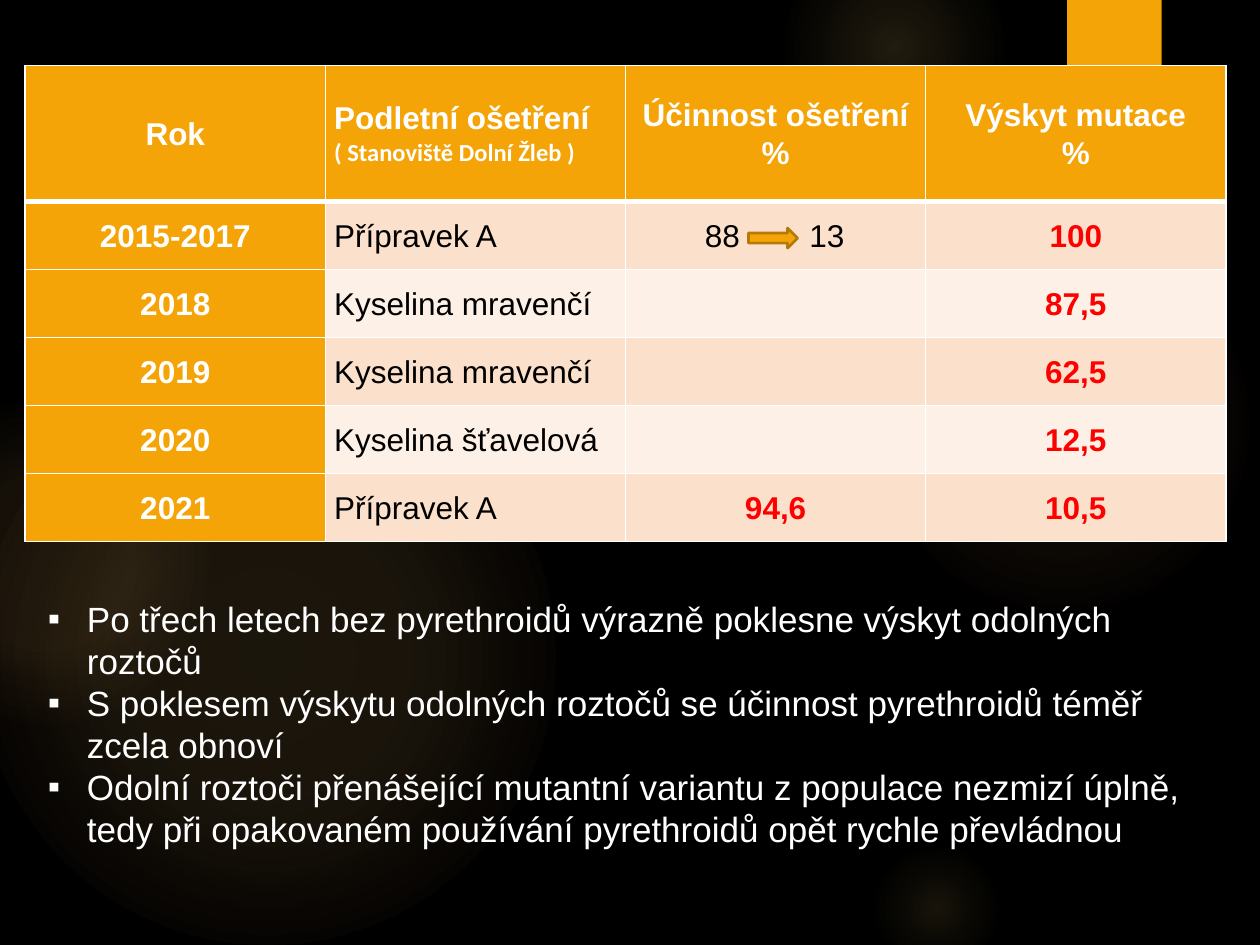
import pptx
import pptx.util
import pptx.dml.color
import pptx.enum.shapes
import pptx.enum.text
import pptx.oxml
import pptx.oxml.ns

Inches = pptx.util.Inches
Pt = pptx.util.Pt
RGBColor = pptx.dml.color.RGBColor
SHAPE = pptx.enum.shapes.MSO_SHAPE
ALIGN = pptx.enum.text.PP_ALIGN
ANCHOR = pptx.enum.text.MSO_ANCHOR
NS = pptx.oxml.ns.nsdecls("a")

BLACK = RGBColor(0x00, 0x00, 0x00)
WHITE = RGBColor(0xFF, 0xFF, 0xFF)
RED = RGBColor(0xFF, 0x00, 0x00)
ORANGE = RGBColor(0xF5, 0xA4, 0x08)
BROWN = RGBColor(0xB5, 0x79, 0x06)
GLOW = RGBColor(0xFA, 0xC9, 0x6A)
BANDS = [RGBColor(0xFB, 0xE0, 0xCC), RGBColor(0xFD, 0xF0, 0xE7)]

GLOWS = [
    (6.89, 1.83, 3.08, [(0, 7), (36, 6), (69, 0)]),
    (6.22, -0.5, 1.75, [(0, 14), (36, 7), (73, 0)]),
    (6.89, 6.67, 1.08, [(0, 10), (31, 5), (66, 0)]),
    (-0.17, 2.92, 4.58, [(0, 11), (36, 10), (75, 0)]),
    (-0.92, 3.17, 2.58, [(0, 8), (36, 8), (72, 0)]),
]
ROWS = [
    [["Rok"], ["Podletní ošetření", "( Stanoviště Dolní Žleb )"],
     ["Účinnost ošetření %"], ["Výskyt mutace", "%"]],
    [["2015-2017"], ["Přípravek A"], ["88\t13"], ["100"]],
    [["2018"], ["Kyselina mravenčí"], [], ["87,5"]],
    [["2019"], ["Kyselina mravenčí"], [], ["62,5"]],
    [["2020"], ["Kyselina šťavelová"], [], ["12,5"]],
    [["2021"], ["Přípravek A"], ["94,6"], ["10,5"]],
]
POINTS = [
    "Po třech letech bez pyrethroidů výrazně poklesne výskyt odolných roztočů",
    "S poklesem výskytu odolných roztočů se účinnost pyrethroidů téměř zcela obnoví",
    "Odolní roztoči přenášející mutantní variantu z populace nezmizí úplně, "
    "tedy při opakovaném používání pyrethroidů opět rychle převládnou",
]


def add_run(p, text, size, color, bold=False, font="Arial"):
    r = p.add_run()
    r.text = text
    r.font.size = Pt(size)
    r.font.name = font
    r.font.bold = bold
    r.font.color.rgb = color


def add_shape(slide, kind, left, top, width, height, color):
    sp = slide.shapes.add_shape(kind, Inches(left), Inches(top), Inches(width), Inches(height))
    sp.shadow.inherit = False
    sp.fill.solid()
    sp.fill.fore_color.rgb = color
    sp.line.fill.background()
    return sp


def add_glow(slide, left, top, size, stops):
    sp = add_shape(slide, SHAPE.OVAL, left, top, size, size, GLOW)
    gs = "".join(
        f'<a:gs pos="{pos * 1000}"><a:srgbClr val="{GLOW}">'
        f'<a:alpha val="{alpha * 1000}"/></a:srgbClr></a:gs>'
        for pos, alpha in stops + [(100, 0)])
    grad = pptx.oxml.parse_xml(
        f'<a:gradFill {NS} rotWithShape="1"><a:gsLst>{gs}</a:gsLst><a:path path="circle">'
        '<a:fillToRect l="50000" t="50000" r="50000" b="50000"/></a:path></a:gradFill>')
    spPr = sp._element.spPr
    spPr.replace(spPr.find(pptx.oxml.ns.qn("a:solidFill")), grad)


def set_borders(cell, row):
    widths = {"L": 1, "R": 1, "T": 3 if row == 1 else 1, "B": 3 if row == 0 else 1}
    tcPr = cell._tc.get_or_add_tcPr()
    for i, (side, width) in enumerate(widths.items()):
        tcPr.insert(i, pptx.oxml.parse_xml(
            f'<a:ln{side} {NS} w="{Pt(width)}"><a:solidFill><a:srgbClr val="{WHITE}"/>'
            f'</a:solidFill></a:ln{side}>'))


def fill_cell(cell, row, col, lines):
    head = row == 0 or col == 0
    cell.fill.solid()
    cell.fill.fore_color.rgb = ORANGE if head else BANDS[(row - 1) % 2]
    set_borders(cell, row)
    cell.vertical_anchor = ANCHOR.MIDDLE
    cell.margin_left = cell.margin_right = Inches(0.07)
    cell.margin_top = cell.margin_bottom = 0
    tf = cell.text_frame
    for i, line in enumerate(lines):
        p = tf.paragraphs[0] if i == 0 else tf.add_paragraph()
        tabbed = "\t" in line
        if tabbed:
            cell.margin_left = Inches(0.63)
            p._p.get_or_add_pPr().append(pptx.oxml.parse_xml(
                f'<a:tabLst {NS}><a:tab pos="{Inches(0.83)}" algn="l"/></a:tabLst>'))
        p.alignment = ALIGN.LEFT if col == 1 or tabbed else ALIGN.CENTER
        p.line_spacing = 1.07
        plain = col == 1 or tabbed
        color = WHITE if head else BLACK if plain else RED
        if line.startswith("("):
            add_run(p, line, 14, color, True, "Calibri")
        else:
            add_run(p, line, 18, color, head or not plain)


def add_points(slide, body):
    body.left, body.top = Inches(0.28), Inches(4.69)
    body.width, body.height = Inches(9.37), Inches(2.12)
    tf = body.text_frame
    tf.word_wrap = True
    tf.auto_size = pptx.enum.text.MSO_AUTO_SIZE.NONE
    tf.vertical_anchor = ANCHOR.TOP
    for i, text in enumerate(POINTS):
        p = tf.paragraphs[0] if i == 0 else tf.add_paragraph()
        pPr = p._p.get_or_add_pPr()
        pPr.set("marL", str(Inches(0.31)))
        pPr.set("indent", str(-Inches(0.31)))
        pPr.append(pptx.oxml.parse_xml(f'<a:buFont {NS} typeface="Arial"/>'))
        pPr.append(pptx.oxml.parse_xml(f'<a:buChar {NS} char="▪"/>'))
        p.alignment = ALIGN.LEFT
        p.space_before = p.space_after = Pt(0)
        p.line_spacing = 1.0
        add_run(p, text, 20, WHITE)
    slide.shapes._spTree.append(body._element)


def main():
    prs = pptx.Presentation()
    prs.slide_width, prs.slide_height = Inches(10), Inches(7.5)
    slide = prs.slides.add_slide(prs.slide_layouts[1])
    slide.background.fill.solid()
    slide.background.fill.fore_color.rgb = BLACK
    title = slide.shapes.title._element
    title.getparent().remove(title)

    for glow in GLOWS:
        add_glow(slide, *glow)
    add_shape(slide, SHAPE.RECTANGLE, 8.47, 0, 0.75, 1.2, ORANGE)

    table = slide.shapes.add_table(
        len(ROWS), len(ROWS[0]), Inches(0.2), Inches(0.52), Inches(9.53), Inches(3.78)).table
    for row, cells in enumerate(ROWS):
        table.rows[row].height = Inches(1.08 if row == 0 else 0.54)
        for col, lines in enumerate(cells):
            fill_cell(table.cell(row, col), row, col, lines)

    add_points(slide, slide.placeholders[1])
    arrow = add_shape(slide, SHAPE.RIGHT_ARROW, 5.94, 1.81, 0.39, 0.16, ORANGE)
    arrow.line.color.rgb = BROWN
    arrow.line.width = Pt(1.5)
    prs.save("out.pptx")


if __name__ == "__main__":
    main()
